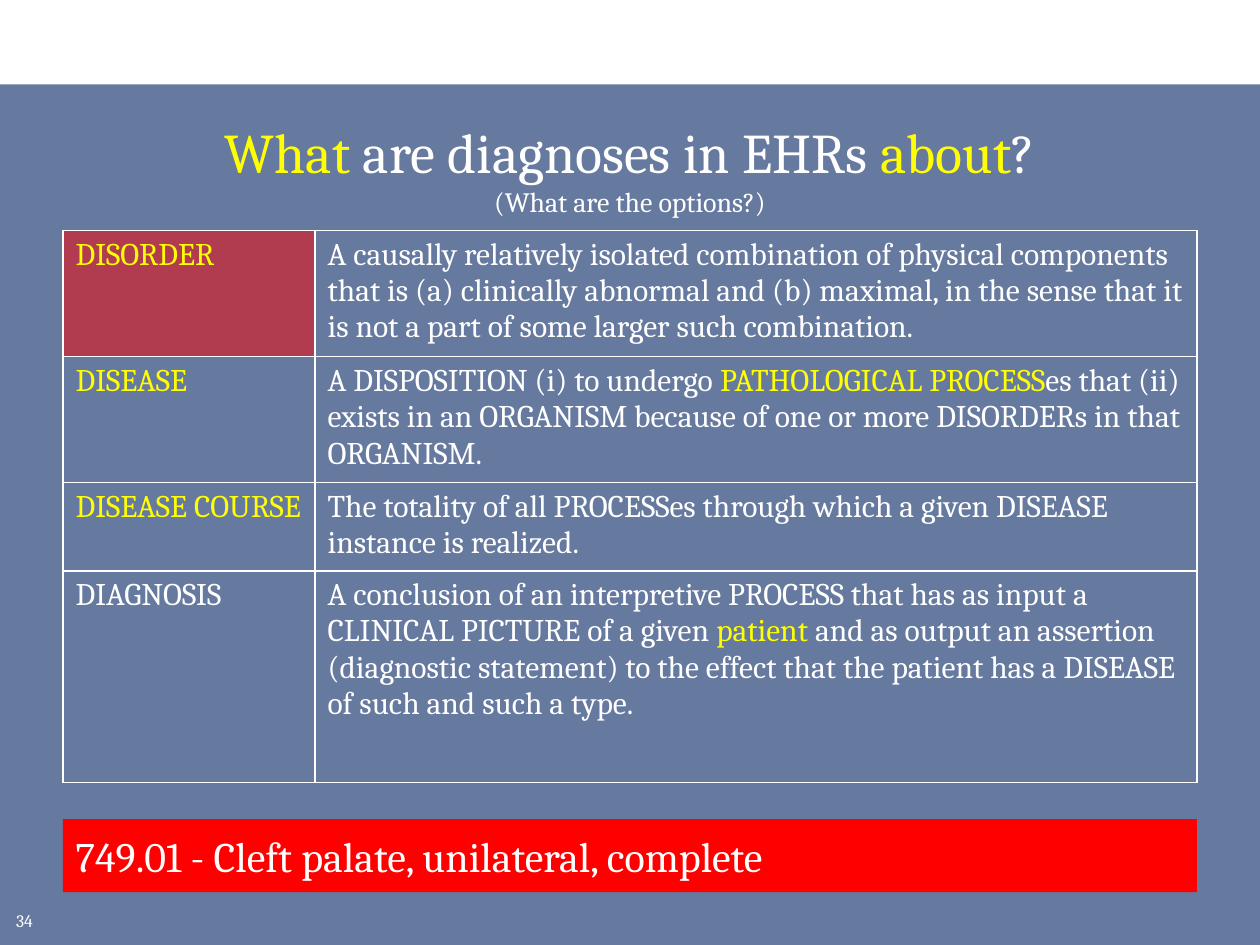
from dataclasses import dataclass

from lxml import etree
from pptx import Presentation
from pptx.dml.color import RGBColor
from pptx.enum.shapes import MSO_SHAPE
from pptx.enum.text import MSO_ANCHOR, PP_ALIGN
from pptx.oxml.ns import qn
from pptx.util import Inches, Pt

RECT = MSO_SHAPE.RECTANGLE
TOP, MIDDLE = MSO_ANCHOR.TOP, MSO_ANCHOR.MIDDLE
LEFT, CENTER = PP_ALIGN.LEFT, PP_ALIGN.CENTER


@dataclass(frozen=True)
class Theme:
    """Colours, font and type sizes of the slide."""
    font: str = "Cambria"
    white: str = "FFFFFF"
    yellow: str = "FFFF00"
    navy: str = "002060"
    red: str = "FF0000"
    title: int = 32
    banner: int = 24
    body: int = 18
    subtitle: int = 16
    number: int = 10
    border: int = 1


T = Theme()
COLS = (2, 7)
ROW_HEIGHTS = (0.99, 1, 0.69, 1.68)
ROWS = (
    ([("DISORDER", T.yellow)],
     [("A causally relatively isolated combination of physical components that is "
       "(a) clinically abnormal and (b) maximal, in the sense that it is not a part "
       "of some larger such combination.", T.white)]),
    ([("DISEASE", T.yellow)],
     [("A DISPOSITION (i) to undergo ", T.white),
      ("PATHOLOGICAL PROCESS", T.yellow),
      ("es that (ii) exists in an ORGANISM because of one or more DISORDERs in that "
       "ORGANISM.", T.white)]),
    ([("DISEASE COURSE", T.yellow)],
     [("The totality of all PROCESSes through which a given DISEASE instance is "
       "realized.", T.white)]),
    ([("DIAGNOSIS", T.white)],
     [("A conclusion of an interpretive PROCESS that has as input a CLINICAL PICTURE "
       "of a given ", T.white),
      ("patient", T.yellow),
      (" and as output an assertion (diagnostic statement) to the effect that the "
       "patient has a DISEASE of such and such a type.", T.white)]),
)


def add_runs(p, runs, size):
    """Append coloured runs to a paragraph."""
    for text, color in runs:
        r = p.add_run()
        r.text = text
        r.font.name = T.font
        r.font.size = Pt(size)
        r.font.color.rgb = RGBColor.from_string(color)


def add_rect(slide, x, y, w, h, color, alpha=None):
    """Add a plain filled rectangle, alpha in percent."""
    sp = slide.shapes.add_shape(RECT, Inches(x), Inches(y), Inches(w), Inches(h))
    sp.shadow.inherit = False
    sp.line.fill.background()
    sp.fill.solid()
    sp.fill.fore_color.rgb = RGBColor.from_string(color)
    if alpha is not None:
        clr = sp._element.spPr.find(qn("a:solidFill"))[0]
        etree.SubElement(clr, qn("a:alpha"), val=str(alpha * 1000))
    return sp


def set_text(sp, runs, size, align=LEFT, anchor=TOP):
    """Fill the first paragraph of a shape and return it."""
    tf = sp.text_frame
    tf.word_wrap = True
    tf.vertical_anchor = anchor
    p = tf.paragraphs[0]
    p.alignment = align
    add_runs(p, runs, size)
    return p


def add_text(slide, x, y, w, h, runs, size, align=LEFT):
    """Add a text box and return it with its paragraph."""
    sp = slide.shapes.add_textbox(Inches(x), Inches(y), Inches(w), Inches(h))
    return sp, set_text(sp, runs, size, align)


def set_borders(cell):
    """Draw a white line on all four sides of a cell."""
    tcPr = cell._tc.get_or_add_tcPr()
    for i, side in enumerate(("a:lnL", "a:lnR", "a:lnT", "a:lnB")):
        ln = etree.Element(qn(side), w=str(Pt(T.border)))
        fill = etree.SubElement(ln, qn("a:solidFill"))
        etree.SubElement(fill, qn("a:srgbClr"), val=T.white)
        tcPr.insert(i, ln)


def add_definitions(slide, x, y):
    """Add the table of terms and definitions."""
    frame = slide.shapes.add_table(len(ROWS), len(COLS), Inches(x), Inches(y),
                                   Inches(sum(COLS)), Inches(sum(ROW_HEIGHTS)))
    table = frame.table
    table.first_row = table.horz_banding = False
    for col, width in zip(table.columns, COLS):
        col.width = Inches(width)
    for row, height, contents in zip(table.rows, ROW_HEIGHTS, ROWS):
        row.height = Inches(height)
        for cell, runs in zip(row.cells, contents):
            cell.fill.background()
            set_borders(cell)
            add_runs(cell.text_frame.paragraphs[0], runs, T.body)


def add_title(slide):
    """Add the title with its smaller second line."""
    runs = [("What", T.yellow), (" are diagnoses in EHRs ", T.white),
            ("about", T.yellow), ("?", T.white)]
    sp, p = add_text(slide, 0.25, 0.83, 9.5, 0.83, runs, T.title, CENTER)
    sp.text_frame.margin_top = Inches(0.1)
    p.add_line_break()
    add_runs(p, [("(What are the options?)", T.white)], T.subtitle)


def main():
    """Build and save the slide."""
    prs = Presentation()
    prs.slide_width, prs.slide_height = Inches(10), Inches(7.5)
    slide = prs.slides.add_slide(prs.slide_layouts[6])
    add_rect(slide, 0, 0.67, 10, 6.83, T.navy, 60)
    add_text(slide, 0.03, 7.17, 0.39, 0.25, [("34", T.white)], T.number)
    add_rect(slide, 0.5, 1.83, 2, 1, T.red, 50)
    add_definitions(slide, 0.5, 1.83)
    banner = add_rect(slide, 0.5, 6.5, 9, 0.58, T.red)
    set_text(banner, [("749.01 - Cleft palate, unilateral, complete", T.white)],
             T.banner, anchor=MIDDLE)
    add_title(slide)
    prs.save("out.pptx")


if __name__ == "__main__":
    main()
